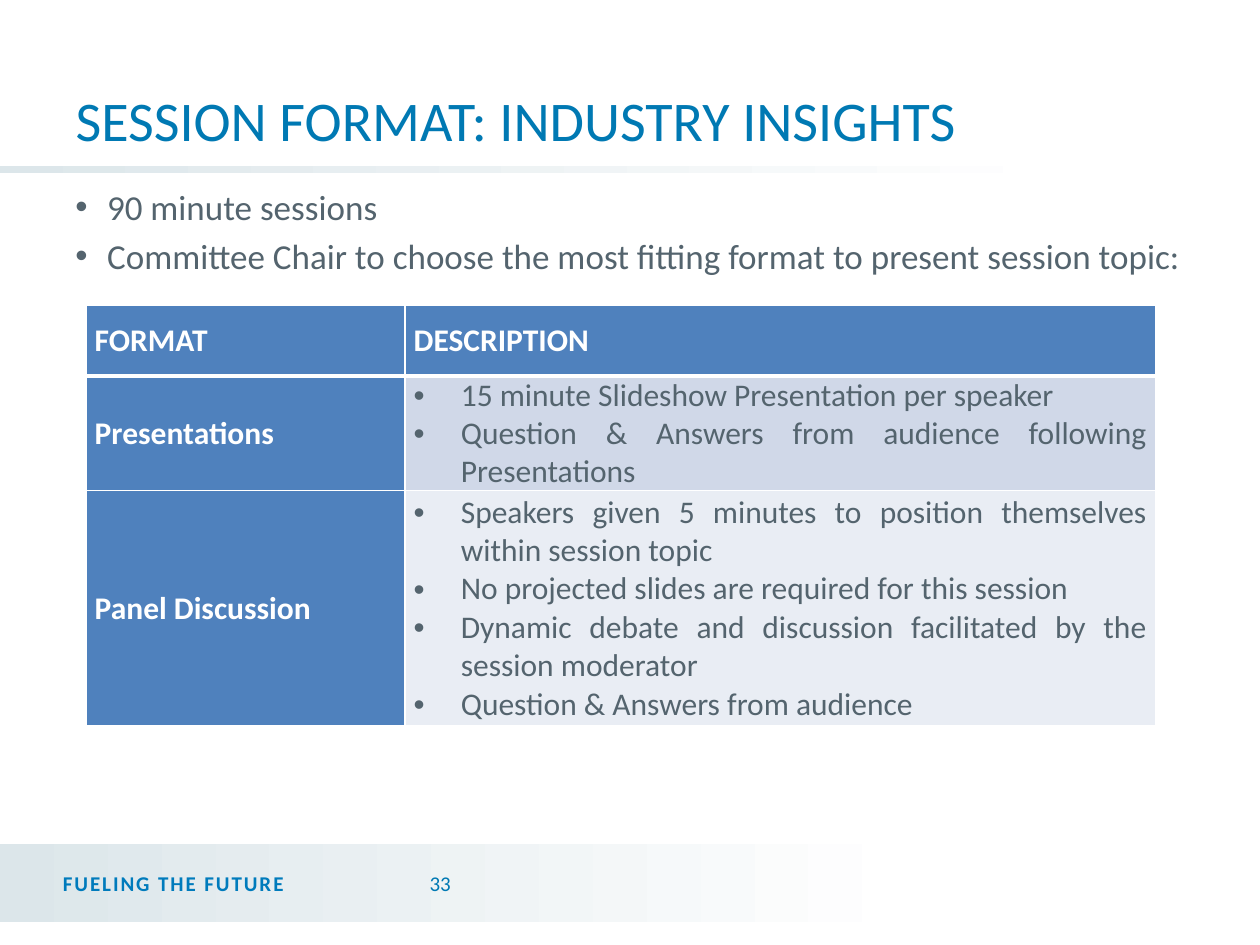
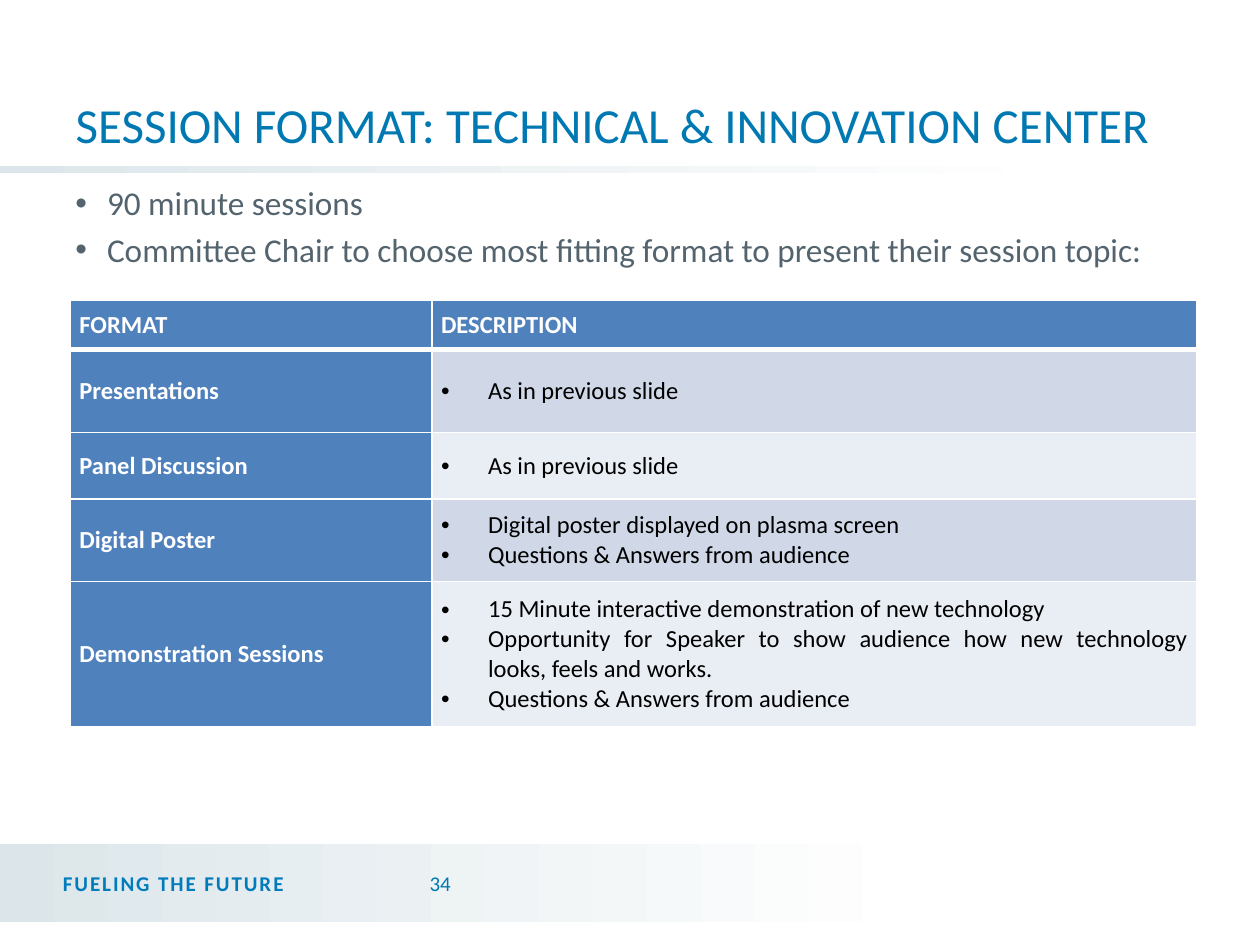
from lxml import etree
from pptx import Presentation
from pptx import util as u
from pptx.dml import color
from pptx.enum import shapes, text
from pptx.oxml import ns

COLORS = {"title": "0079B3", "tagline": "007BBC", "body": "54646E", "band": "DCE6EA",
          "white": "FFFFFF", "black": "000000", "header": "4F81BD",
          "odd row": "D0D8E8", "even row": "E9EDF4"}
RGB = {name: color.RGBColor.from_string(value) for name, value in COLORS.items()}
FONT = "Calibri"

# Left, top, width, height in cm, and the position where the fade ends
BANDS = [(0, 17.02, 18.85, 1.57, 0.98), (0, 3.35, 24.13, 0.13, 0.89)]

SESSIONS = [
    {"title": "SESSION FORMAT: INDUSTRY INSIGHTS", "title size": 32, "page": "33",
     "intro": ["90 minute sessions",
               "Committee Chair to choose the most fitting format to present session topic:"],
     "intro top": 3.61, "intro size": 20,
     "table at": (1.73, 6.15), "columns": (6.43, 15.14), "rows": (1.43, 2.31, 4.75),
     "table size": 18, "table color": "body",
     "formats": [
         ("Presentations", ["15 minute Slideshow Presentation per speaker",
                            "Question & Answers from audience following Presentations"]),
         ("Panel Discussion", ["Speakers given 5 minutes to position themselves within session topic",
                               "No projected slides are required for this session",
                               "Dynamic debate and discussion facilitated by the session moderator",
                               "Question & Answers from audience"])]},
    {"title": "SESSION FORMAT: TECHNICAL & INNOVATION CENTER", "title size": 28, "page": "34",
     "intro": ["90 minute sessions",
               "Committee Chair to choose most fitting format to present their session topic:"],
     "intro top": 3.56, "intro size": 19,
     "table at": (1.42, 6.05), "columns": (7.29, 15.42), "rows": (1, 1.67, 1.34, 1.66, 2.94),
     "table size": 14, "table color": "black",
     "formats": [
         ("Presentations", ["As in previous slide"]),
         ("Panel Discussion", ["As in previous slide"]),
         ("Digital Poster", ["Digital poster displayed on plasma screen",
                             "Questions & Answers from audience"]),
         ("Demonstration Sessions", ["15 Minute interactive demonstration of new technology",
                                     "Opportunity for Speaker to show audience how new technology "
                                     "looks, feels and works.",
                                     "Questions & Answers from audience"])]},
]


def write(frame, lines, size, ink, bold=False, bullet_indent=None, gap=0,
          align=text.PP_ALIGN.LEFT):
    """Fill a text frame with paragraphs of one style; bullet_indent is in cm."""
    frame.word_wrap = True
    for i, line in enumerate(lines):
        paragraph = frame.paragraphs[0] if i == 0 else frame.add_paragraph()
        paragraph.text = line
        paragraph.alignment = align
        paragraph.space_before = u.Pt(gap if i else 0)
        if bullet_indent:
            properties = paragraph._p.get_or_add_pPr()
            properties.set("marL", str(u.Cm(bullet_indent)))
            properties.set("indent", str(-u.Cm(bullet_indent)))
            etree.SubElement(properties, ns.qn("a:buFont"), typeface="Arial")
            etree.SubElement(properties, ns.qn("a:buChar"), char="•")
        paragraph.font.name = FONT
        paragraph.font.size = u.Pt(size)
        paragraph.font.bold = bold
        paragraph.font.color.rgb = RGB[ink]


def style_cell(cell, fill, top, bottom):
    """Set margins, white borders (widths in points) and fill of a cell."""
    cell.vertical_anchor = text.MSO_ANCHOR.MIDDLE
    cell.margin_left = cell.margin_right = u.Cm(0.18)
    cell.margin_top = cell.margin_bottom = 0
    properties = cell._tc.get_or_add_tcPr()
    for side, width in (("L", 1), ("R", 1), ("T", top), ("B", bottom)):
        border = etree.SubElement(properties, ns.qn(f"a:ln{side}"), w=str(u.Pt(width)))
        solid = etree.SubElement(border, ns.qn("a:solidFill"))
        etree.SubElement(solid, ns.qn("a:srgbClr"), val=COLORS["white"])
    cell.fill.solid()
    cell.fill.fore_color.rgb = RGB[fill]


deck = Presentation()
deck.slide_width, deck.slide_height = u.Cm(25.4), u.Cm(19.05)
title_only = deck.slide_layouts[5]

for session in SESSIONS:
    slide = deck.slides.add_slide(title_only)

    # Fading bands behind the footer and under the title
    for left, top, width, height, fade_end in BANDS:
        band = slide.shapes.add_shape(shapes.MSO_SHAPE.RECTANGLE, u.Cm(left), u.Cm(top),
                                      u.Cm(width), u.Cm(height))
        band.shadow.inherit = False
        band.line.fill.background()
        band.fill.gradient()
        band.fill.gradient_angle = 0
        for stop, ink, position in zip(band.fill.gradient_stops, ("band", "white"), (0, fade_end)):
            stop.color.rgb = RGB[ink]
            stop.position = position

    # Title
    title = slide.shapes.title
    title.left, title.top, title.width, title.height = u.Cm(1.27), u.Cm(0.03), u.Cm(22.86), u.Cm(3.18)
    title.text_frame.auto_size = text.MSO_AUTO_SIZE.NONE
    title.text_frame.vertical_anchor = text.MSO_ANCHOR.BOTTOM
    write(title.text_frame, [session["title"]], session["title size"], "title")

    # Footer: tagline and page number
    tagline = slide.shapes.add_textbox(u.Cm(1.27), u.Cm(17.3), u.Cm(6.22), u.Cm(1.02)).text_frame
    page = slide.shapes.add_textbox(u.Cm(8.41), u.Cm(17.3), u.Cm(2.03), u.Cm(1.02)).text_frame
    tagline.margin_left = 0
    tagline.vertical_anchor = page.vertical_anchor = text.MSO_ANCHOR.MIDDLE
    write(tagline, ["FUELING THE FUTURE"], 12, "tagline", bold=True)
    tagline.paragraphs[0].runs[0]._r.get_or_add_rPr().set("spc", "110")
    write(page, [session["page"]], 12, "title")

    # Introductory bullets
    intro = slide.shapes.add_textbox(u.Cm(1.27), u.Cm(session["intro top"]), u.Cm(22.86), u.Cm(2.3))
    write(intro.text_frame, session["intro"], session["intro size"], "body",
          bullet_indent=0.64, gap=4)

    # Table of formats
    left, top = session["table at"]
    columns, rows = session["columns"], session["rows"]
    formats = slide.shapes.add_table(len(rows), len(columns), u.Cm(left), u.Cm(top),
                                     u.Cm(sum(columns)), u.Cm(sum(rows))).table
    for column, width in zip(formats.columns, columns):
        column.width = u.Cm(width)
    for row, height in zip(formats.rows, rows):
        row.height = u.Cm(height)

    size = session["table size"]
    for cell, heading in zip(formats.rows[0].cells, ("FORMAT", "DESCRIPTION")):
        style_cell(cell, "header", top=1, bottom=3)
        write(cell.text_frame, [heading], size, "white", bold=True)
    for number, (name, points) in enumerate(session["formats"], 1):
        name_cell, points_cell = formats.rows[number].cells
        rule = 3 if number == 1 else 1
        style_cell(name_cell, "header", top=rule, bottom=1)
        style_cell(points_cell, "odd row" if number % 2 else "even row", top=rule, bottom=1)
        write(name_cell.text_frame, [name], size, "white", bold=True)
        write(points_cell.text_frame, points, size, session["table color"],
              bullet_indent=0.95, align=text.PP_ALIGN.JUSTIFY)

deck.save("out.pptx")
